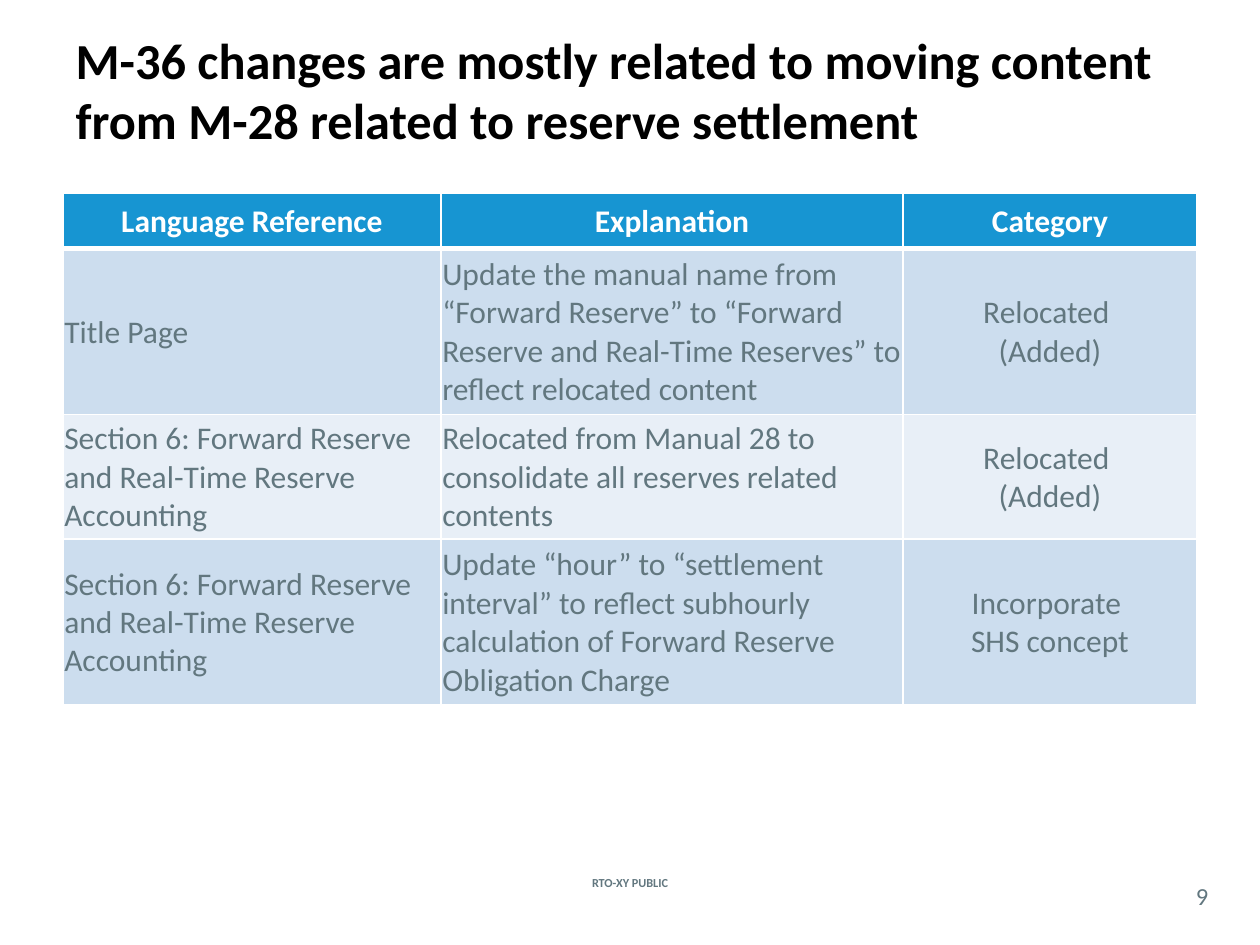
import pptx
import pptx.util
import pptx.dml.color
import pptx.enum.text
import pptx.oxml
import pptx.oxml.ns

Pt = pptx.util.Pt
ALIGN = pptx.enum.text.PP_ALIGN
MIDDLE = pptx.enum.text.MSO_ANCHOR.MIDDLE

# Content
TITLE = ("M-36 changes are mostly related to moving content "
         "from M-28 related to reserve settlement")
FOOTER = "RTO-XY PUBLIC"
PAGE_NUMBER = "9"
SECTION = "Section 6: Forward Reserve and Real-Time Reserve Accounting"
ROWS = [
    ("Language Reference", "Explanation", "Category"),
    ("Title Page",
     "Update the manual name from “Forward Reserve” to “Forward Reserve "
     "and Real-Time Reserves” to reflect relocated content",
     "Relocated \n(Added)"),
    (SECTION,
     "Relocated from Manual 28 to consolidate all reserves related contents",
     "Relocated \n(Added)"),
    (SECTION,
     "Update “hour” to “settlement interval” to reflect subhourly "
     "calculation of Forward Reserve Obligation Charge",
     "Incorporate \nSHS concept"),
]

# Layout and theme
COLUMN_WIDTHS = (216, 264, 168)
ROW_HEIGHTS = (31.75, 95, 71, 95)
TABLE_LEFT, TABLE_TOP = 36, 110.25
THEME = {
    "font": "Calibri", "title": "000000", "text": "62777F", "white": "FFFFFF",
    "header": "1795D2", "bands": ("CCDDEE", "E8EFF7"),
    "title size": 28.8, "table size": 18, "number size": 14, "footer size": 7,
}


def style(frame, size, color, bold=False, align=ALIGN.LEFT):
    for para in frame.paragraphs:
        para.alignment = align
        para.font.name = THEME["font"]
        para.font.size = Pt(size)
        para.font.bold = bold
        para.font.color.rgb = pptx.dml.color.RGBColor.from_string(color)


def set_margins(item, left, top, right, bottom):
    item.margin_left, item.margin_top = Pt(left), Pt(top)
    item.margin_right, item.margin_bottom = Pt(right), Pt(bottom)


def add_label(page, text, place, size, bold=False):
    box = page.shapes.add_textbox(*map(Pt, place))
    frame = box.text_frame
    frame.word_wrap = True
    frame.vertical_anchor = MIDDLE
    set_margins(frame, 0, 0, 0, 0)
    frame.text = text
    style(frame, size, THEME["text"], bold, ALIGN.CENTER)


def set_borders(cell, bottom_width, top_width):
    properties = cell._tc.get_or_add_tcPr()
    widths = {"lnL": 1, "lnR": 1, "lnT": top_width, "lnB": bottom_width}
    for position, (tag, width) in enumerate(widths.items()):
        properties.insert(position, pptx.oxml.parse_xml(
            f'<a:{tag} {pptx.oxml.ns.nsdecls("a")} w="{Pt(width)}"><a:solidFill>'
            f'<a:srgbClr val="{THEME["white"]}"/></a:solidFill></a:{tag}>'))


def add_table(page):
    table = page.shapes.add_table(
        len(ROWS), len(COLUMN_WIDTHS), Pt(TABLE_LEFT), Pt(TABLE_TOP),
        Pt(sum(COLUMN_WIDTHS)), Pt(sum(ROW_HEIGHTS))).table
    for column, width in zip(table.columns, COLUMN_WIDTHS):
        column.width = Pt(width)
    for r, (texts, height) in enumerate(zip(ROWS, ROW_HEIGHTS)):
        table.rows[r].height = Pt(height)
        header = r == 0
        fill = THEME["header"] if header else THEME["bands"][(r - 1) % 2]
        color = THEME["white"] if header else THEME["text"]
        for c, text in enumerate(texts):
            cell = table.cell(r, c)
            cell.text = text
            cell.vertical_anchor = MIDDLE
            set_margins(cell, 0.75, 0.75, 0.75, 0)
            cell.fill.solid()
            cell.fill.fore_color.rgb = pptx.dml.color.RGBColor.from_string(fill)
            centered = header or c == len(texts) - 1
            style(cell.text_frame, THEME["table size"], color, header,
                  ALIGN.CENTER if centered else ALIGN.LEFT)
            set_borders(cell, 3 if header else 1, 3 if r == 1 else 1)


def main():
    deck = pptx.Presentation()
    deck.slide_width, deck.slide_height = Pt(720), Pt(540)
    page = deck.slides.add_slide(deck.slide_layouts[5])

    # Title
    title = page.shapes.title
    title.left, title.top, title.width, title.height = map(Pt, (36, 6, 648, 90))
    title.text_frame.text = TITLE
    title.text_frame.vertical_anchor = MIDDLE
    title.text_frame.auto_size = pptx.enum.text.MSO_AUTO_SIZE.NONE
    style(title.text_frame, THEME["title size"], THEME["title"], True)

    # Table of changes
    add_table(page)

    # Footer and page number
    add_label(page, FOOTER, (307.25, 498.25, 105.5, 12.25),
              THEME["footer size"], True)
    add_label(page, PAGE_NUMBER, (671.75, 501.25, 30.25, 21),
              THEME["number size"])

    deck.save("out.pptx")


if __name__ == "__main__":
    main()
